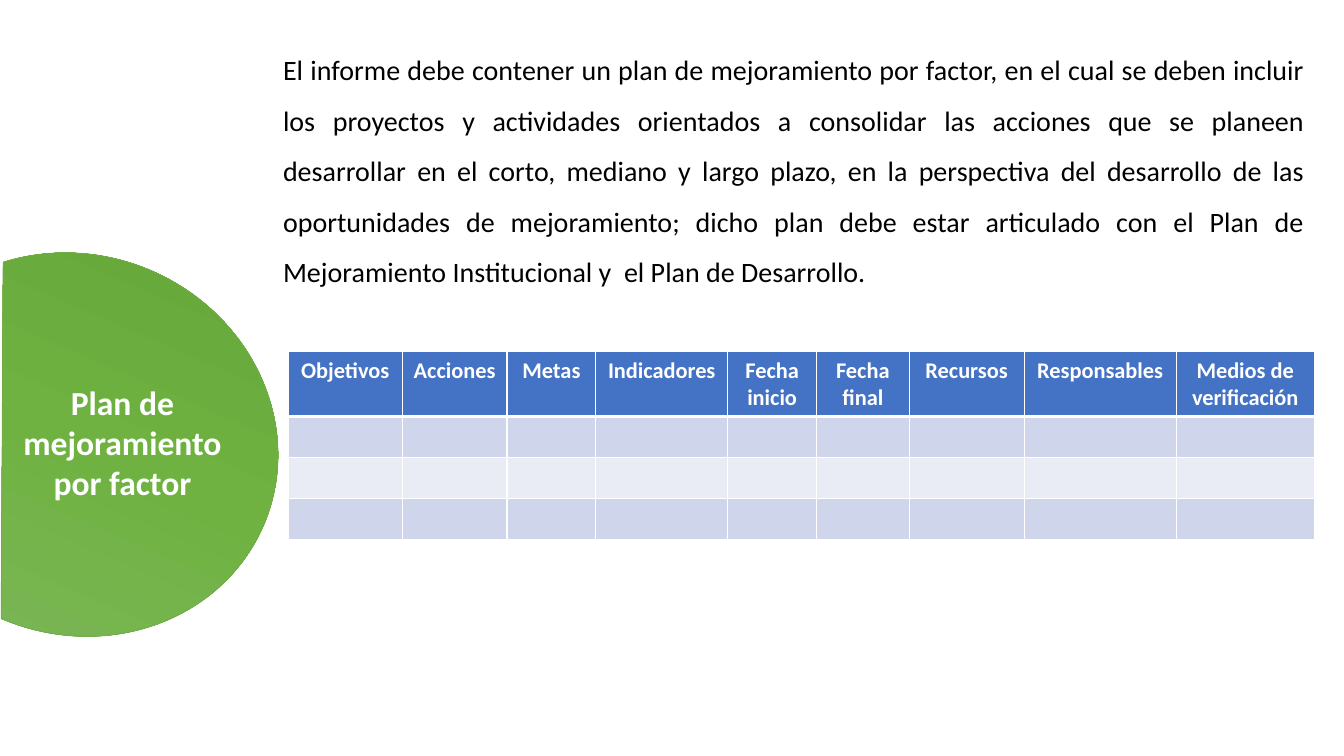
from copy import deepcopy

from lxml.etree import SubElement
from pptx import Presentation
from pptx.dml.color import RGBColor
from pptx.enum.shapes import MSO_SHAPE
from pptx.enum.text import PP_ALIGN
from pptx.oxml.ns import qn
from pptx.util import Pt

INTRODUCTION = (
    "El informe debe contener un plan de mejoramiento por factor, en el cual se deben incluir "
    "los proyectos y actividades orientados a consolidar las acciones que se planeen desarrollar "
    "en el corto, mediano y largo plazo, en la perspectiva del desarrollo de las oportunidades de "
    "mejoramiento; dicho plan debe estar articulado con el Plan de Mejoramiento Institucional y  "
    "el Plan de Desarrollo."
)
TITLE = ["Plan de mejoramiento", "por factor"]
COLUMNS = [
    ("Objetivos", 81.4),
    ("Acciones", 74.9),
    ("Metas", 63.4),
    ("Indicadores", 94.3),
    ("Fecha inicio", 63.4),
    ("Fecha final", 66.2),
    ("Recursos", 82.1),
    ("Responsables", 108.7),
    ("Medios de verificación", 98.6),
]
ROW_HEIGHTS = [46.2, 29.3, 29.3, 29.3]

FONT = "Calibri"
BLACK = RGBColor(0x00, 0x00, 0x00)
WHITE = RGBColor(0xFF, 0xFF, 0xFF)
GREEN = RGBColor(0x70, 0xAD, 0x47)
GREEN_STOPS = [
    (0, RGBColor(0x81, 0xB8, 0x61)),
    (0.5, RGBColor(0x6F, 0xB2, 0x42)),
    (1, RGBColor(0x62, 0xA3, 0x36)),
]
HEADER_BLUE = RGBColor(0x44, 0x72, 0xC4)
BANDS = [RGBColor(0xE9, 0xEB, 0xF5), RGBColor(0xCF, 0xD5, 0xEA)]


def write_text(text_frame, lines, size, color, bold=False, align=PP_ALIGN.CENTER, spacing=None, indent=0):
    text_frame.word_wrap = True
    for index, line in enumerate(lines):
        paragraph = text_frame.paragraphs[0] if index == 0 else text_frame.add_paragraph()
        paragraph.text = line
        paragraph.alignment = align
        paragraph.line_spacing = spacing
        if indent:
            paragraph._p.get_or_add_pPr().set("marL", str(Pt(indent)))
        paragraph.font.name = FONT
        paragraph.font.size = Pt(size)
        paragraph.font.bold = bold
        paragraph.font.color.rgb = color


def add_text_box(slide, left, top, width, height, lines, **text_format):
    box = slide.shapes.add_textbox(Pt(left), Pt(top), Pt(width), Pt(height))
    write_text(box.text_frame, lines, **text_format)


def add_green_chord(slide):
    chord = slide.shapes.add_shape(MSO_SHAPE.CHORD, Pt(-91.4), Pt(182.2), Pt(291.6), Pt(270.7))
    chord.adjustments[0] = 26.92
    chord.adjustments[1] = 162
    chord.rotation = 203.3
    chord.shadow.inherit = False
    chord.line.color.rgb = GREEN
    chord.line.width = Pt(0.5)
    chord.fill.gradient()
    chord.fill.gradient_angle = 270
    first_stop = chord._element.spPr.find(".//" + qn("a:gs"))
    first_stop.addnext(deepcopy(first_stop))
    for stop, (position, color) in zip(chord.fill.gradient_stops, GREEN_STOPS):
        stop.position = position
        stop.color.rgb = color


def set_borders(cell, **widths):
    properties = cell._tc.get_or_add_tcPr()
    for side in "LRTB":
        line = SubElement(properties, qn("a:ln" + side), w=str(Pt(widths.get(side, 1))))
        fill = SubElement(line, qn("a:solidFill"))
        SubElement(fill, qn("a:srgbClr"), val=str(WHITE))


def add_plan_table(slide):
    total_width = sum(width for _, width in COLUMNS)
    frame = slide.shapes.add_table(
        len(ROW_HEIGHTS), len(COLUMNS), Pt(205.9), Pt(251.3), Pt(total_width), Pt(sum(ROW_HEIGHTS))
    )
    table = frame.table
    for row, height in zip(table.rows, ROW_HEIGHTS):
        row.height = Pt(height)
    for column_index, (heading, width) in enumerate(COLUMNS):
        table.columns[column_index].width = Pt(width)
        for row_index in range(len(ROW_HEIGHTS)):
            cell = table.cell(row_index, column_index)
            set_borders(cell, T=3 if row_index == 1 else 1, B=3 if row_index == 0 else 1)
            cell.fill.solid()
            cell.fill.fore_color.rgb = BANDS[row_index % 2] if row_index else HEADER_BLUE
        write_text(table.cell(0, column_index).text_frame, [heading], size=16, color=WHITE, bold=True)


def main():
    presentation = Presentation()
    presentation.slide_width = Pt(960)
    presentation.slide_height = Pt(540)
    slide = presentation.slides.add_slide(presentation.slide_layouts[6])
    add_text_box(
        slide, 159.1, 22.3, 779.8, 191.5, [INTRODUCTION],
        size=20, color=BLACK, align=PP_ALIGN.JUSTIFY, spacing=1.5, indent=36,
    )
    add_green_chord(slide)
    add_text_box(slide, 7.2, 269, 160.6, 94.5, TITLE, size=24, color=WHITE, bold=True)
    add_plan_table(slide)
    presentation.save("out.pptx")


if __name__ == "__main__":
    main()
